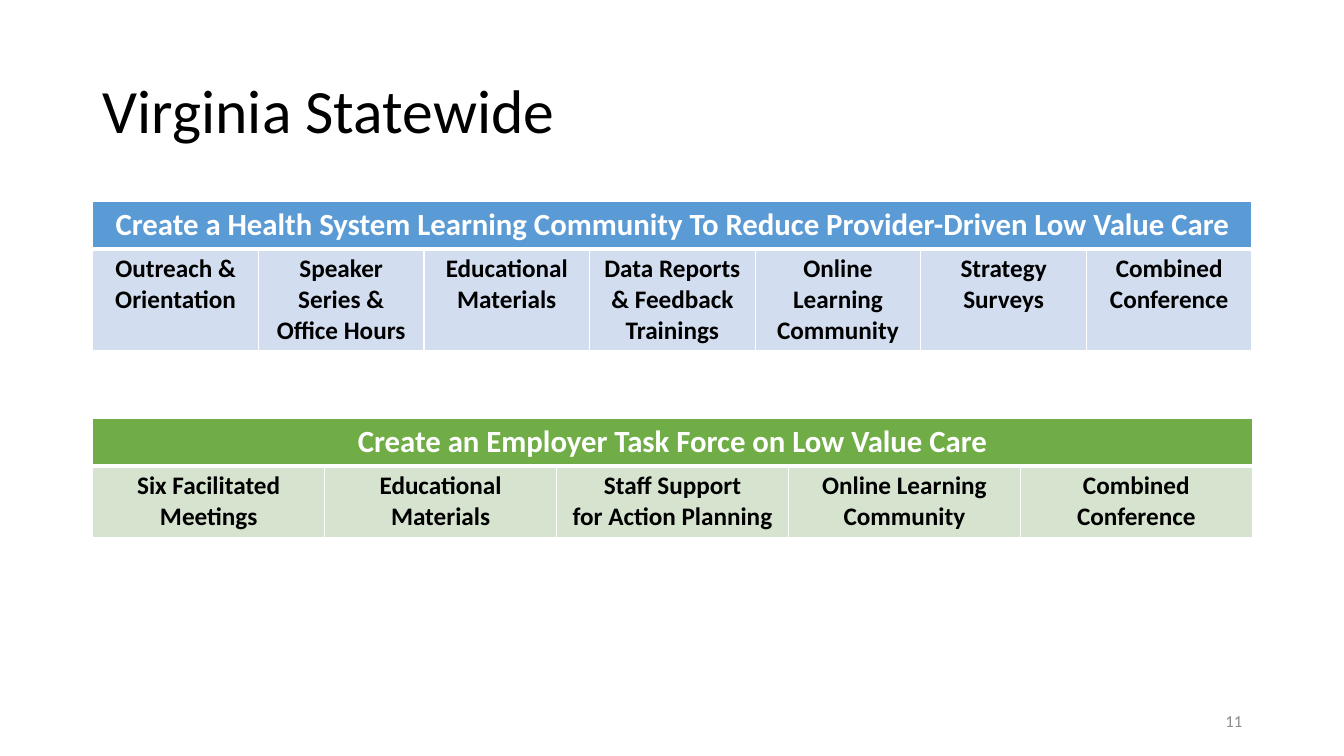
from lxml.etree import SubElement
from pptx import Presentation
from pptx.dml.color import RGBColor
from pptx.enum.text import MSO_ANCHOR, PP_ALIGN
from pptx.oxml.ns import qn
from pptx.util import Inches, Pt

BLACK = RGBColor(0x00, 0x00, 0x00)
WHITE = RGBColor(0xFF, 0xFF, 0xFF)
GRAY = RGBColor(0x8C, 0x8C, 0x8C)
BLUE = RGBColor(0x5B, 0x9B, 0xD5)
PALE_BLUE = RGBColor(0xD2, 0xDE, 0xEF)
GREEN = RGBColor(0x70, 0xAD, 0x47)
PALE_GREEN = RGBColor(0xD5, 0xE3, 0xCF)

TITLE = "Virginia Statewide"
PAGE = "11"
PROGRAMS = [
    {
        "heading": "Create a Health System Learning Community "
                   "To Reduce Provider-Driven Low Value Care",
        "activities": ["Outreach & Orientation", "Speaker Series & Office Hours",
                       "Educational Materials", "Data Reports & Feedback Trainings",
                       "Online Learning Community", "Strategy Surveys",
                       "Combined Conference"],
        "colors": (BLUE, PALE_BLUE), "top": 2, "body_height": 1.01,
    },
    {
        "heading": "Create an Employer Task Force on Low Value Care",
        "activities": ["Six Facilitated Meetings", "Educational Materials",
                       "Staff Support\vfor Action Planning",
                       "Online Learning Community", "Combined Conference"],
        "colors": (GREEN, PALE_GREEN), "top": 4.15, "body_height": 0.71,
    },
]

WIDTH, HEIGHT = 13.33, 7.5
LEFT, CONTENT_WIDTH = 0.92, 11.5
HEADING_HEIGHT = 0.47
HEADING_FONT = {"size": Pt(22), "bold": True, "name": "Calibri"}
ACTIVITY_FONT = {"size": Pt(18), "bold": True, "name": "Calibri"}


def format_paragraph(p, color, align, font):
    p.alignment = align
    p.font.color.rgb = color
    for name, value in font.items():
        setattr(p.font, name, value)


def add_borders(cell, bottom):
    tcPr = cell._tc.get_or_add_tcPr()
    for side, width in (("L", 1), ("R", 1), ("T", 1), ("B", bottom)):
        ln = SubElement(tcPr, qn(f"a:ln{side}"), w=str(Pt(width)))
        fill = SubElement(ln, qn("a:solidFill"))
        SubElement(fill, qn("a:srgbClr"), val=str(WHITE))


def add_program(s, heading, activities, colors, top, body_height):
    count = len(activities)
    table = s.shapes.add_table(
        2, count, Inches(LEFT), Inches(top), Inches(CONTENT_WIDTH),
        Inches(HEADING_HEIGHT + body_height)).table
    for column in table.columns:
        column.width = Inches(CONTENT_WIDTH / count)
    rows = (
        ([heading] + [""] * (count - 1), HEADING_HEIGHT, WHITE, HEADING_FONT, 3),
        (activities, body_height, BLACK, ACTIVITY_FONT, 1),
    )
    for i, (texts, height, color, font, bottom) in enumerate(rows):
        table.rows[i].height = Inches(height)
        for j, text in enumerate(texts):
            cell = table.cell(i, j)
            add_borders(cell, 3 if i == 0 else bottom)
            cell.fill.solid()
            cell.fill.fore_color.rgb = colors[i]
            cell.text = text
            format_paragraph(cell.text_frame.paragraphs[0], color,
                             PP_ALIGN.CENTER, font)
    table.cell(0, 0).merge(table.cell(0, count - 1))


def main():
    prs = Presentation()
    prs.slide_width, prs.slide_height = Inches(WIDTH), Inches(HEIGHT)
    s = prs.slides.add_slide(prs.slide_layouts[5])

    title = s.shapes.title
    title.left, title.top = Inches(LEFT), Inches(0.4)
    title.width, title.height = Inches(CONTENT_WIDTH), Inches(1.45)
    page = s.shapes.add_textbox(Inches(LEFT + CONTENT_WIDTH - 3), Inches(6.95),
                                Inches(3), Inches(0.4))
    for sp, text, color, align, size in (
            (title, TITLE, BLACK, PP_ALIGN.LEFT, 44),
            (page, PAGE, GRAY, PP_ALIGN.RIGHT, 12)):
        tf = sp.text_frame
        tf.text = text
        tf.word_wrap = True
        tf.vertical_anchor = MSO_ANCHOR.MIDDLE
        format_paragraph(tf.paragraphs[0], color, align,
                         {"size": Pt(size), "name": "Calibri"})
    title.text_frame.paragraphs[0].line_spacing = 0.9

    for program in PROGRAMS:
        add_program(s, **program)
    prs.save("out.pptx")


if __name__ == "__main__":
    main()
